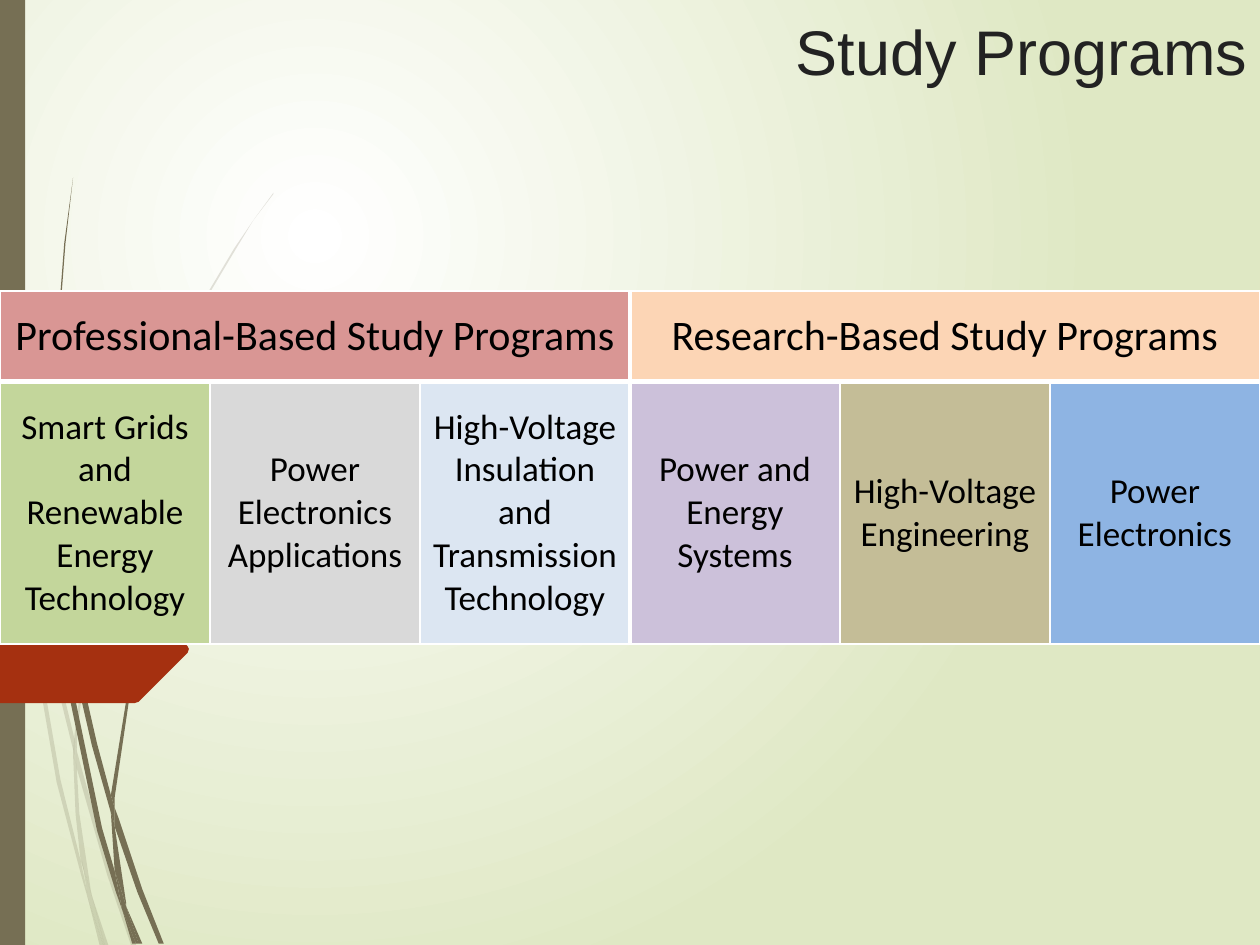
from dataclasses import dataclass

from lxml import etree
from pptx import Presentation
from pptx.dml.color import RGBColor
from pptx.enum.shapes import MSO_SHAPE
from pptx.enum.text import MSO_ANCHOR, PP_ALIGN
from pptx.oxml.ns import qn
from pptx.util import Inches, Pt

RECTANGLE = MSO_SHAPE.RECTANGLE
TOP, MIDDLE = MSO_ANCHOR.TOP, MSO_ANCHOR.MIDDLE
CENTER, RIGHT = PP_ALIGN.CENTER, PP_ALIGN.RIGHT
TITLE_ONLY = 5


@dataclass(frozen=True)
class Theme:
    glow: str = "FFFFFF"
    meadow: str = "DFE8C4"
    grass: str = "766F54"
    tag: str = "A53010"
    title: str = "222222"
    text: str = "000000"
    border: str = "FFFFFF"
    title_font: str = "Arial"
    table_font: str = "Calibri"
    title_size: int = 36
    group_size: int = 24
    program_size: int = 20
    thin: int = 1
    thick: int = 3


# Outlines of the grass blades, in inches
PALE_BLADES = [
    [(0.08, 3.5), (0.06, 3.22), (0, 2.82), (0, 2.99), (0.07, 3.44)],
    [(0.4, 5.22), (0.59, 5.99), (0.59, 5.86), (0.43, 5.2), (0.1, 3.45), (0.12, 3.76)],
    [(0.64, 6.07), (0.61, 5.96), (0.61, 6.1), (0.85, 6.94), (1.04, 7.5), (1.08, 7.5),
     (0.88, 6.92)],
    [(0.83, 7.5), (0.86, 7.5), (0.73, 7.11)],
    [(0.64, 6.83), (0.48, 6.19), (0.22, 4.69), (0.12, 3.76), (0.08, 3.5), (0.19, 4.7),
     (0.45, 6.21), (0.64, 6.93), (0.7, 7.14), (0.69, 7.07)],
    [(0.58, 5.99), (0.6, 6.46), (0.64, 6.83), (0.67, 6.92), (0.73, 7.11), (0.72, 7.06),
     (0.63, 6.46), (0.61, 6.1), (0.61, 6.08)],
    [(0.61, 5.84), (0.76, 4.62), (1.11, 3.49), (1.59, 2.45), (1.87, 1.98), (2.01, 1.75),
     (2.17, 1.54), (2.17, 1.53), (2.01, 1.75), (1.86, 1.97), (1.58, 2.44), (1.1, 3.48),
     (0.75, 4.61), (0.59, 5.84), (0.59, 5.86), (0.61, 5.96)],
    [(0.7, 7.14), (0.79, 7.5), (0.82, 7.5)],
    [(0.61, 6.08), (0.61, 6.1), (0.61, 5.96), (0.59, 5.86), (0.58, 5.99)],
    [(0.67, 6.92), (0.65, 6.83), (0.69, 7.07), (0.7, 7.14), (0.82, 7.5), (0.83, 7.5),
     (0.73, 7.11)],
]
DARK_BLADES = [
    [(0.05, 1.1), (0.14, 2.33), (0.27, 3.55), (0.46, 4.77), (0.47, 4.81), (0.45, 4.57),
     (0.45, 4.53), (0.3, 3.55), (0.15, 2.32), (0.06, 1.09), (0.04, 0.48), (0.03, 0),
     (0.02, 0), (0.03, 0.48)],
    [(0.73, 5.92), (0.88, 6.45), (0.88, 6.33), (0.88, 6.31), (0.77, 5.9), (0.5, 4.72),
     (0.53, 5.05)],
    [(0.94, 6.49), (0.91, 6.41), (0.91, 6.56), (1.09, 7.08), (1.26, 7.49), (1.3, 7.49),
     (1.13, 7.06)],
    [(0.91, 6.91), (0.81, 6.57), (0.6, 5.56), (0.53, 5.05), (0.47, 4.77), (0.56, 5.57),
     (0.77, 6.59), (0.92, 7.08), (0.97, 7.22), (0.96, 7.17)],
    [(0.5, 4.72), (0.48, 4.53), (0.44, 3.49), (0.48, 2.45), (0.52, 1.93), (0.58, 1.41),
     (0.51, 1.93), (0.47, 2.45), (0.43, 3.49), (0.45, 4.49), (0.49, 4.72)],
    [(1.1, 7.49), (1.13, 7.49), (1, 7.19)],
    [(0.47, 4.77), (0.53, 5.05), (0.5, 4.72), (0.49, 4.72), (0.45, 4.49), (0.45, 4.53)],
    [(0.91, 6.33), (1.03, 5.52), (1.31, 4.76), (1.69, 4.06), (1.91, 3.74), (2.03, 3.59),
     (2.16, 3.44), (2.15, 3.44), (2.03, 3.58), (1.91, 3.73), (1.68, 4.05), (1.29, 4.74),
     (1.01, 5.51), (0.88, 6.31), (0.91, 6.41)],
    [(0.97, 7.22), (1.05, 7.49), (1.08, 7.49)],
    [(0.88, 6.45), (0.91, 6.91), (0.96, 7.06), (1, 7.19), (1, 7.16), (0.91, 6.56),
     (0.9, 6.51)],
    [(0.88, 6.45), (0.9, 6.51), (0.91, 6.56), (0.91, 6.41), (0.88, 6.31), (0.88, 6.33)],
    [(0.96, 7.06), (0.91, 6.91), (0.96, 7.17), (0.97, 7.22), (1.08, 7.49), (1.1, 7.49),
     (1, 7.19)],
]
TAG = [(1.07, 5.58), (1.1, 5.57), (1.49, 5.18), (1.5, 5.15), (1.49, 5.13), (1.1, 4.74),
       (1.07, 4.73), (-0.03, 4.73), (-0.03, 5.58)]

# Study programs: group, group colour, and its programs with their colours
PROGRAM_GROUPS = [
    ("Professional-Based Study Programs", "D99694", [
        ("Smart Grids and Renewable Energy Technology", "C3D69B"),
        ("Power Electronics Applications", "D9D9D9"),
        ("High-Voltage Insulation and Transmission Technology", "DCE6F2")]),
    ("Research-Based Study Programs", "FCD5B5", [
        ("Power and Energy Systems", "CCC1DA"),
        ("High-Voltage Engineering", "C4BD97"),
        ("Power Electronics", "8EB4E3")]),
]


def write(frame, text, *, font, size, color, align):
    paragraph = frame.paragraphs[0]
    paragraph.alignment = align
    run = paragraph.add_run()
    run.text = text
    run.font.name, run.font.size = font, Pt(size)
    run.font.color.rgb = RGBColor.from_string(color)


class SlideBuilder:
    def __init__(self, slide, theme):
        self.slide, self.theme = slide, theme

    def background(self):
        fill = self.slide.background.fill
        fill.gradient()
        for stop, color in zip(fill.gradient_stops, (self.theme.glow, self.theme.meadow)):
            stop.color.rgb = RGBColor.from_string(color)
        # Circular glow centred in the upper left quarter
        gradient = self.slide.element.find(".//" + qn("a:gradFill"))
        linear = gradient.find(qn("a:lin"))
        glow = etree.Element(qn("a:path"), path="circle")
        etree.SubElement(glow, qn("a:fillToRect"), l="50000", t="50000", r="100000", b="100000")
        gradient.replace(linear, glow)

    def paint(self, shape, color, opacity=100):
        shape.shadow.inherit = False
        shape.fill.solid()
        shape.fill.fore_color.rgb = RGBColor.from_string(color)
        shape.line.fill.background()
        if opacity < 100:
            rgb = shape._element.spPr.find(".//" + qn("a:srgbClr"))
            etree.SubElement(rgb, qn("a:alpha"), val=str(opacity * 1000))

    def outline(self, shapes, points, color, opacity=100):
        start, *rest = [(Inches(x), Inches(y)) for x, y in points]
        builder = shapes.build_freeform(*start)
        builder.add_line_segments(rest, close=True)
        self.paint(builder.convert_to_shape(), color, opacity)

    def grass(self, blades, opacity=100):
        tuft = self.slide.shapes.add_group_shape()
        for blade in blades:
            self.outline(tuft.shapes, blade, self.theme.grass, opacity)

    def bar(self, left, top, width, height):
        box = map(Inches, (left, top, width, height))
        self.paint(self.slide.shapes.add_shape(RECTANGLE, *box), self.theme.grass)

    def title(self, text, left, top, width, height):
        title = self.slide.shapes.title
        title.left, title.top = Inches(left), Inches(top)
        title.width, title.height = Inches(width), Inches(height)
        frame = title.text_frame
        frame.vertical_anchor, frame.margin_top = TOP, Inches(0.1)
        write(frame, text, font=self.theme.title_font, size=self.theme.title_size,
              color=self.theme.title, align=RIGHT)
        self.slide.shapes._spTree.append(title._element)  # in front of the decoration

    def cell(self, cell, text, fill, size, thick_sides):
        cell.vertical_anchor = MIDDLE
        write(cell.text_frame, text, font=self.theme.table_font, size=size,
              color=self.theme.text, align=CENTER)
        properties = cell._tc.get_or_add_tcPr()
        for side in "LRTB":
            width = self.theme.thick if side in thick_sides else self.theme.thin
            line = etree.SubElement(properties, qn(f"a:ln{side}"), w=str(Pt(width)))
            solid = etree.SubElement(line, qn("a:solidFill"))
            etree.SubElement(solid, qn("a:srgbClr"), val=self.theme.border)
        cell.fill.solid()
        cell.fill.fore_color.rgb = RGBColor.from_string(fill)

    def program_table(self, groups, left, top, width, row_heights):
        span = len(groups[0][2])
        columns = span * len(groups)
        box = map(Inches, (left, top, width, sum(row_heights)))
        table = self.slide.shapes.add_table(len(row_heights), columns, *box).table
        table.first_row = table.horz_banding = False
        for row, height in zip(table.rows, row_heights):
            row.height = Inches(height)
        for index, (group, group_fill, programs) in enumerate(groups):
            first, last = index * span, (index + 1) * span - 1
            # Thick rules run between groups and under the header
            left_rule = "L" if first > 0 else ""
            right_rule = "R" if last < columns - 1 else ""
            header = table.cell(0, first)
            header.merge(table.cell(0, last))
            self.cell(header, group, group_fill, self.theme.group_size,
                      "B" + left_rule + right_rule)
            for column, (program, fill) in enumerate(programs, first):
                rules = "T" + left_rule * (column == first) + right_rule * (column == last)
                self.cell(table.cell(1, column), program, fill, self.theme.program_size, rules)


def main():
    deck = Presentation()
    deck.slide_width, deck.slide_height = Inches(10), Inches(7.5)
    theme = Theme()
    slide = deck.slides.add_slide(deck.slide_layouts[TITLE_ONLY])
    page = SlideBuilder(slide, theme)

    # Decoration
    page.background()
    page.grass(PALE_BLADES, opacity=20)
    page.grass(DARK_BLADES)
    page.bar(0, 0, 0.2, 7.5)
    page.outline(slide.shapes, TAG, theme.tag)

    # Content
    page.title("Study Programs", 1.14, 0, 8.86, 0.91)
    page.program_table(PROGRAM_GROUPS, 0, 2.31, 10, (0.72, 2.08))
    deck.save("out.pptx")


if __name__ == "__main__":
    main()
